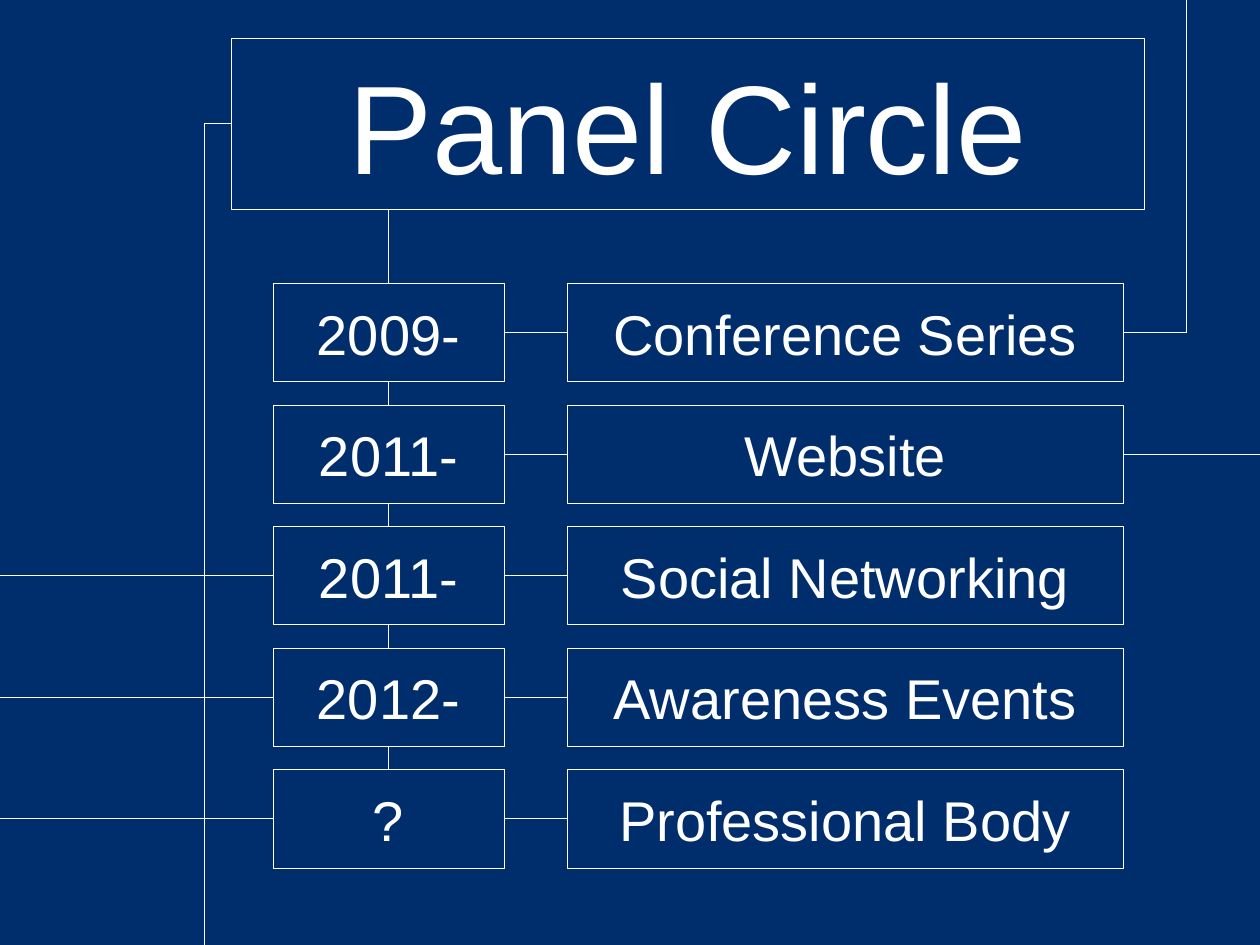
from lxml import etree
from pptx import Presentation
from pptx.dml.color import RGBColor
from pptx.enum import shapes, text
from pptx.oxml import ns
from pptx.util import Pt

COLORS = {"background": "002E6C", "foreground": "FFFFFF"}
WIDTH, HEIGHT = 720, 540
WHITE = RGBColor.from_string(COLORS["foreground"])

presentation = Presentation()
presentation.slide_width, presentation.slide_height = Pt(WIDTH), Pt(HEIGHT)
slide = presentation.slides.add_slide(presentation.slide_layouts[6])
slide.background.fill.solid()
slide.background.fill.fore_color.rgb = RGBColor.from_string(COLORS["background"])


def add_box(left, top, width, height, words, size):
    shape = slide.shapes.add_shape(
        shapes.MSO_SHAPE.RECTANGLE, Pt(left), Pt(top), Pt(width), Pt(height))
    shape.shadow.inherit = False
    shape.fill.background()
    shape.line.color.rgb = WHITE
    shape.line.width = Pt(0.5)
    frame = shape.text_frame
    frame.text = words
    frame.word_wrap = True
    frame.vertical_anchor = text.MSO_ANCHOR.MIDDLE
    paragraph = frame.paragraphs[0]
    paragraph.alignment = text.PP_ALIGN.CENTER
    font = paragraph.runs[0].font
    font.name, font.size = "Arial", Pt(size)
    font.color.rgb = WHITE


def add_line(x1, y1, x2, y2):
    line = slide.shapes.add_connector(
        shapes.MSO_CONNECTOR.STRAIGHT, Pt(x1), Pt(y1), Pt(x2), Pt(y2))
    line.line.color.rgb = WHITE
    line.line.width = Pt(0.5)
    etree.SubElement(line._element.spPr, ns.qn("a:effectLst"))


title_left, title_top, title_width, title_height = 132, 21.75, 522, 98
title_bottom = title_top + title_height
title_middle = title_top + title_height / 2
add_box(title_left, title_top, title_width, title_height, "Panel Circle", 72)

rail_left, rail_right = 116.75, 678
add_line(rail_left, HEIGHT, rail_left, title_middle)
add_line(rail_left, title_middle, title_left, title_middle)

timeline = [
    ("2009-", "Conference Series"),
    ("2011-", "Website"),
    ("2011-", "Social Networking"),
    ("2012-", "Awareness Events"),
    ("?", "Professional Body"),
]
first_top, row_height, row_pitch = 162, 56.2, 69.45
year_left, year_width = 156, 132
topic_left, topic_width = 324, 318
year_right, topic_right = year_left + year_width, topic_left + topic_width
year_center = year_left + year_width / 2

previous_bottom = title_bottom
for index, (year, topic) in enumerate(timeline):
    top = first_top + index * row_pitch
    middle = top + row_height / 2
    add_box(year_left, top, year_width, row_height, year, 32)
    add_box(topic_left, top, topic_width, row_height, topic, 32)
    add_line(year_center, previous_bottom, year_center, top)
    add_line(year_right, middle, topic_left, middle)
    if index == 0:
        add_line(topic_right, middle, rail_right, middle)
        add_line(rail_right, 0, rail_right, middle)
    elif index == 1:
        add_line(topic_right, middle, WIDTH, middle)
    else:
        add_line(0, middle, year_left, middle)
    previous_bottom = top + row_height

presentation.save("out.pptx")
